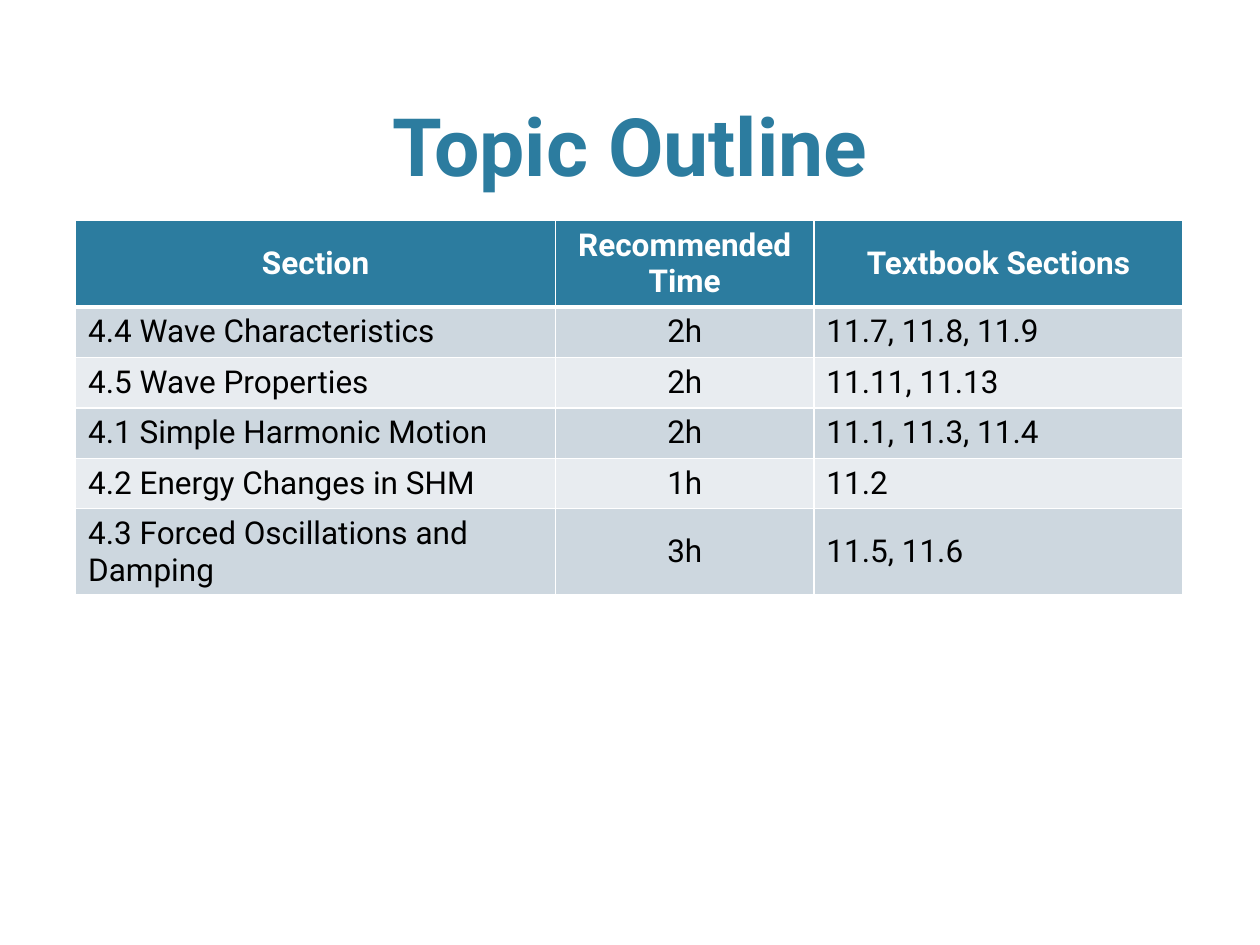
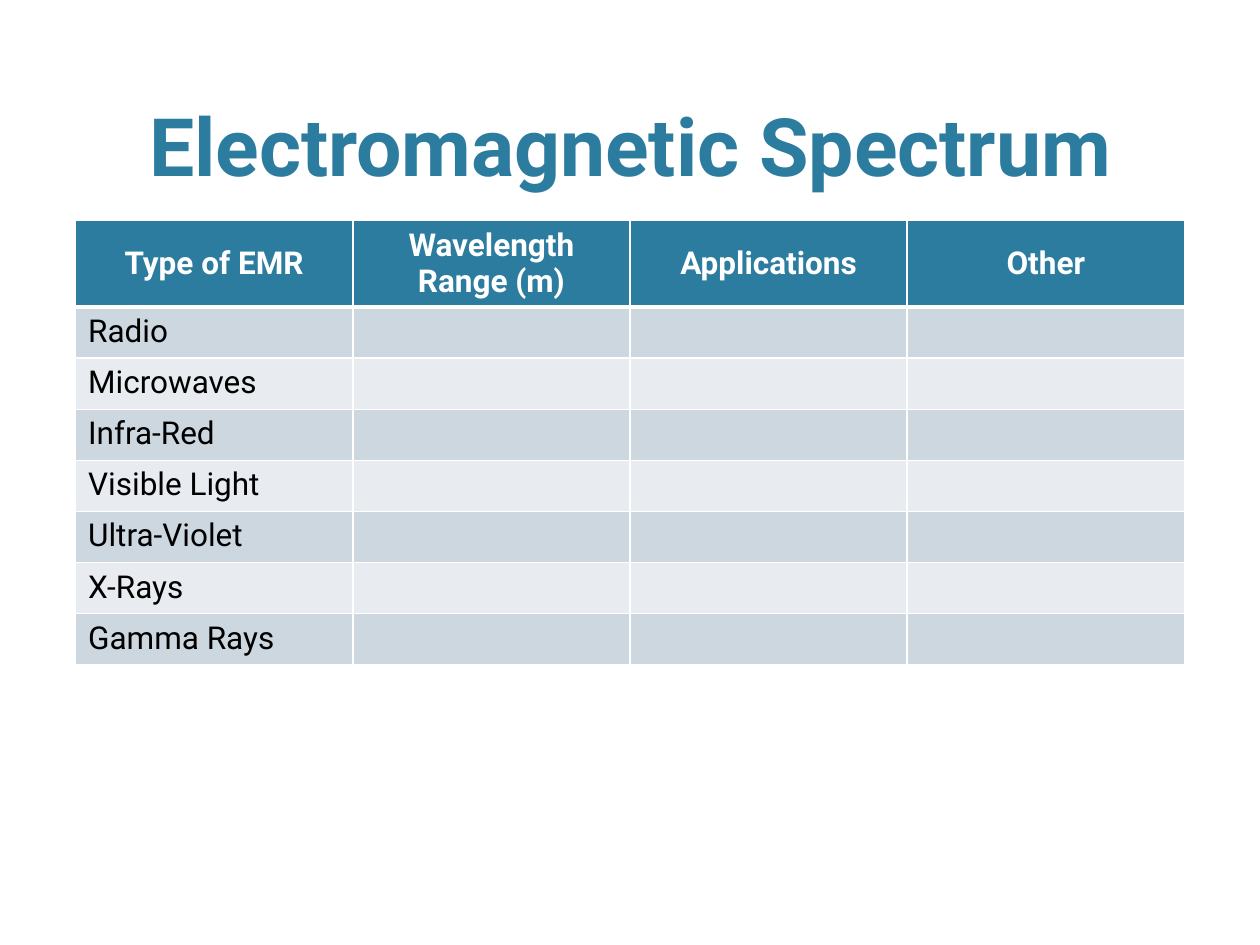
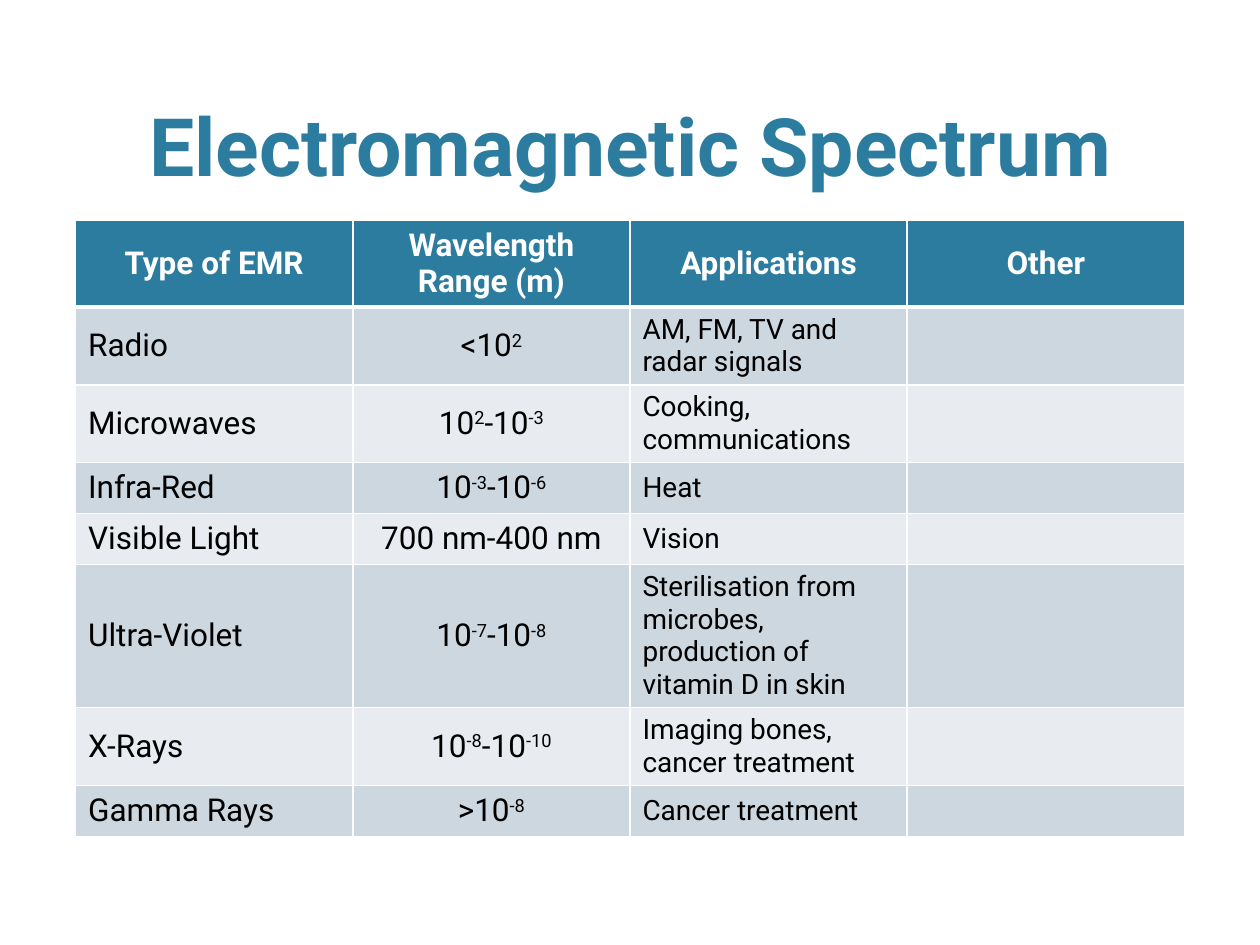
from lxml.etree import SubElement
from pptx import Presentation
from pptx.dml.color import RGBColor
from pptx.enum.text import MSO_ANCHOR as Anchor, PP_ALIGN as Align
from pptx.oxml.ns import qn
from pptx.util import Inches, Pt

COLORS = {
    "teal": "2C7C9F",
    "white": "FFFFFF",
    "black": "000000",
    "dark_band": "CDD7DF",
    "light_band": "E8ECF0",
}
FONT = "Roboto"
LEFT, TITLE_TOP, TABLE_TOP = Inches(0.6), Inches(0.12), Inches(1.75)
CONTENT_WIDTH, TITLE_HEIGHT = Inches(8.8), Inches(1.46)
ROW_HEIGHT = Inches(0.4)

SPECTRUM_HEADER = ["Type of EMR", "Wavelength Range (m)", "Applications", "Other"]
# Text between a pair of ^ signs is superscript.
SPECTRUM = [
    ["Radio", "<10^2^", "AM, FM, TV and radar signals", ""],
    ["Microwaves", "10^2^-10^-3^", "Cooking, communications", ""],
    ["Infra-Red", "10^-3^-10^-6^", "Heat", ""],
    ["Visible Light", "700 nm-400 nm", "Vision", ""],
    ["Ultra-Violet", "10^-7^-10^-8^",
     "Sterilisation from microbes, production of vitamin D in skin", ""],
    ["X-Rays", "10^-8^-10^-10^", "Imaging bones, cancer treatment", ""],
    ["Gamma Rays", ">10^-8^", "Cancer treatment", ""],
]
OUTLINE = [
    ["Section", "Recommended Time", "Textbook Sections"],
    ["4.4 Wave Characteristics", "2h", "11.7, 11.8, 11.9"],
    ["4.5 Wave Properties", "2h", "11.11, 11.13"],
    ["4.1 Simple Harmonic Motion", "2h", "11.1, 11.3, 11.4"],
    ["4.2 Energy Changes in SHM", "1h", "11.2"],
    ["4.3 Forced Oscillations and Damping", "3h", "11.5, 11.6"],
]
BLANK_SPECTRUM = [[row[0], "", "", ""] for row in SPECTRUM]

# Title, rows, column widths, table height, body anchor, text size of the third column
SLIDES = [
    ("Topic Outline", OUTLINE, [3.81, 2.05, 2.93], 3.02, Anchor.MIDDLE, 18),
    ("Electromagnetic Spectrum", [SPECTRUM_HEADER] + BLANK_SPECTRUM,
     [2.2] * 4, 3.54, Anchor.TOP, 18),
    ("Electromagnetic Spectrum", [SPECTRUM_HEADER] + SPECTRUM,
     [2.2] * 4, 4.98, Anchor.MIDDLE, 16),
]


def format_run(run, size, color, bold):
    run.font.name = FONT
    run.font.size = Pt(size)
    run.font.bold = bold
    run.font.color.rgb = RGBColor.from_string(COLORS[color])


def add_borders(cell, row_index):
    """Draw white cell edges, with a thick rule below the header row."""
    properties = cell._tc.get_or_add_tcPr()
    thick_edge = {0: "lnB", 1: "lnT"}.get(row_index)
    for edge in ("lnL", "lnR", "lnT", "lnB"):
        width = Pt(3) if edge == thick_edge else Pt(1)
        line = SubElement(properties, qn(f"a:{edge}"), w=str(width))
        fill = SubElement(line, qn("a:solidFill"))
        SubElement(fill, qn("a:srgbClr"), val=COLORS["white"])


presentation = Presentation()
presentation.slide_width, presentation.slide_height = Inches(10), Inches(7.5)

for title_text, rows, widths, table_height, body_anchor, third_size in SLIDES:
    slide = presentation.slides.add_slide(presentation.slide_layouts[5])
    title = slide.shapes.title
    title.left, title.top = LEFT, TITLE_TOP
    title.width, title.height = CONTENT_WIDTH, TITLE_HEIGHT
    title.text_frame.text = title_text
    title.text_frame.vertical_anchor = Anchor.BOTTOM
    paragraph = title.text_frame.paragraphs[0]
    paragraph.alignment = Align.CENTER
    format_run(paragraph.runs[0], 46, "teal", True)

    frame = slide.shapes.add_table(len(rows), len(widths), LEFT, TABLE_TOP,
                                   CONTENT_WIDTH, ROW_HEIGHT * len(rows))
    table = frame.table
    for column, width in zip(table.columns, widths):
        column.width = Inches(width)

    for row_index, row in enumerate(rows):
        is_header = row_index == 0
        band = "teal" if is_header else ("light_band", "dark_band")[row_index % 2]
        for column_index, text in enumerate(row):
            cell = table.cell(row_index, column_index)
            cell.vertical_anchor = Anchor.MIDDLE if is_header else body_anchor
            add_borders(cell, row_index)
            cell.fill.solid()
            cell.fill.fore_color.rgb = RGBColor.from_string(COLORS[band])

            paragraph = cell.text_frame.paragraphs[0]
            centred = is_header or column_index == 1
            paragraph.alignment = Align.CENTER if centred else Align.LEFT
            size = third_size if column_index == 2 and not is_header else 18
            for part_index, part in enumerate(text.split("^")):
                if not part:
                    continue
                run = paragraph.add_run()
                run.text = part
                format_run(run, size, "white" if is_header else "black", is_header)
                if part_index % 2:
                    run._r.get_or_add_rPr().set("baseline", "30000")

    frame.height = Inches(table_height)

presentation.save("out.pptx")
